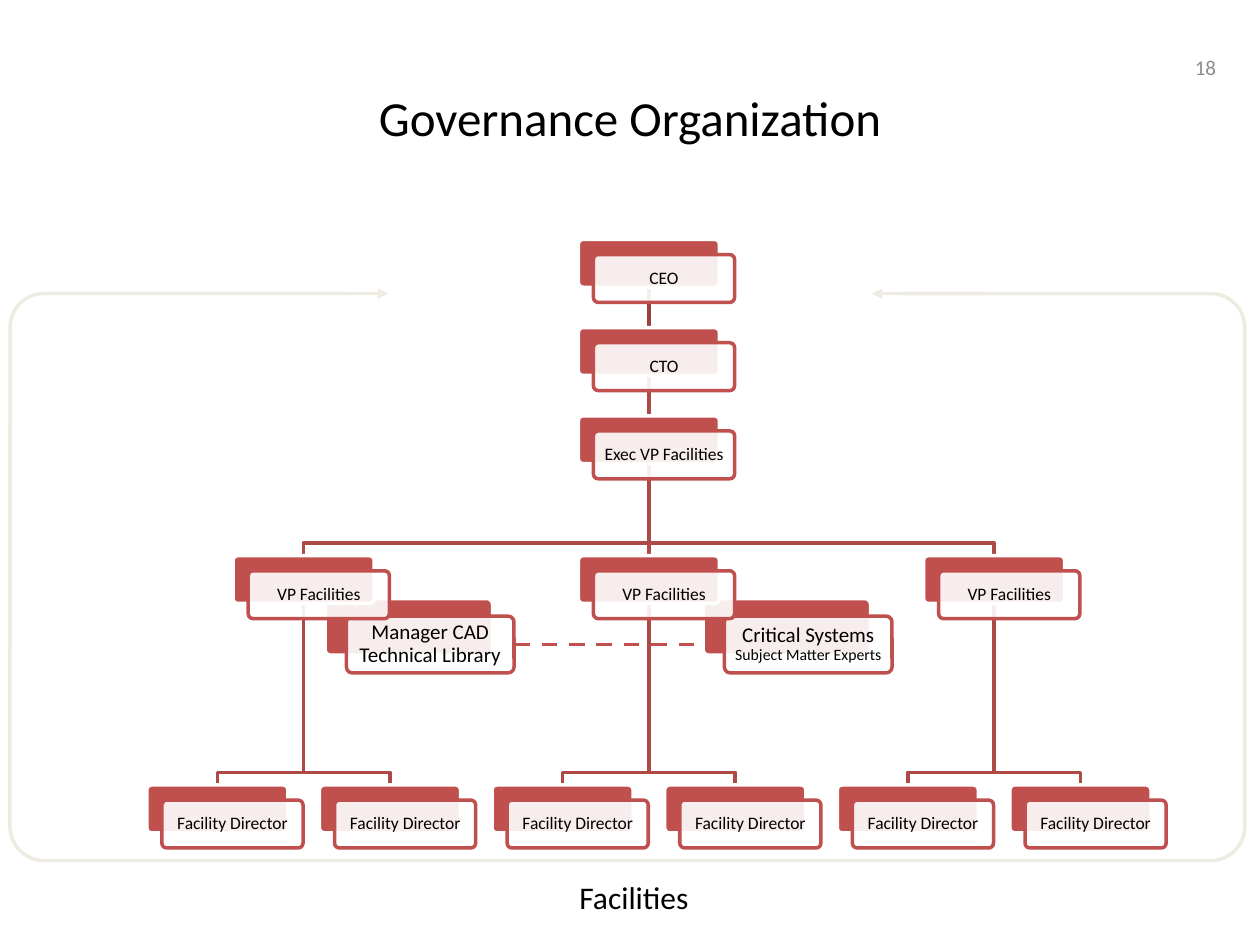
from dataclasses import dataclass

from lxml.etree import SubElement
from pptx import Presentation
from pptx.dml.color import RGBColor
from pptx.enum.dml import MSO_LINE
from pptx.enum.shapes import MSO_CONNECTOR, MSO_SHAPE
from pptx.enum.text import MSO_ANCHOR, PP_ALIGN
from pptx.oxml.ns import qn
from pptx.util import Inches, Pt

TOP, LEFT, BOTTOM, RIGHT = range(4)


@dataclass(frozen=True)
class Theme:
    font: str = "Calibri"
    text: str = "000000"
    muted: str = "8C8C8C"
    white: str = "FFFFFF"
    accent: str = "C0504D"
    link: str = "AE4946"
    top_link: str = "9A403E"
    frame: str = "EEECE1"
    title_size: float = 28
    caption_size: float = 18
    manager_size: float = 12
    expert_size: float = 9
    card_size: float = 10
    number_size: float = 12
    line_width: float = 2
    dash_width: float = 2.25
    card_opacity: int = 90


class SlideBuilder:
    def __init__(self, slide, theme):
        self.slide = slide
        self.theme = theme

    def style_line(self, line, color, width=None):
        line.color.rgb = RGBColor.from_string(color)
        line.width = Pt(width or self.theme.line_width)

    def fill_text(self, frame, runs, color=None, align=PP_ALIGN.CENTER, inset=None, spacing=None):
        frame.word_wrap = True
        frame.vertical_anchor = MSO_ANCHOR.MIDDLE
        if inset is not None:
            frame.margin_left = frame.margin_right = Inches(inset)
            frame.margin_top = frame.margin_bottom = Inches(inset)
        paragraph = frame.paragraphs[0]
        paragraph.alignment = align
        paragraph.line_spacing = spacing
        for text, size in runs:
            run = paragraph.add_run()
            run.text = text
            run.font.name = self.theme.font
            run.font.size = Pt(size)
            run.font.color.rgb = RGBColor.from_string(color or self.theme.text)

    def text(self, left, top, width, height, content, size, **options):
        box = self.slide.shapes.add_textbox(*map(Inches, (left, top, width, height)))
        self.fill_text(box.text_frame, [(content, size)], **options)

    def box(self, left, top, width, height, fill=None, line=None, radius=None):
        kind = MSO_SHAPE.RECTANGLE if radius is None else MSO_SHAPE.ROUNDED_RECTANGLE
        shape = self.slide.shapes.add_shape(kind, *map(Inches, (left, top, width, height)))
        shape.shadow.inherit = False
        if radius is not None:
            shape.adjustments[0] = radius
        if fill:
            shape.fill.solid()
            shape.fill.fore_color.rgb = RGBColor.from_string(fill)
        else:
            shape.fill.background()
        if line:
            self.style_line(shape.line, line)
        else:
            shape.line.fill.background()
        return shape

    def card(self, left, top, width, height, shift, runs, inset):
        theme = self.theme
        plate = self.box(left, top, width, height, theme.accent, theme.white, 0.1)
        front = self.box(left + shift[0], top + shift[1], width, height, theme.white, theme.accent, 0.1)
        color = front._element.spPr.find(qn("a:solidFill"))[0]
        SubElement(color, qn("a:alpha")).set("val", str(theme.card_opacity * 1000))
        self.fill_text(front.text_frame, runs, inset=inset, spacing=0.9)
        return plate, front

    def line(self, start, end, color, width=None, dashed=False, arrow=False):
        connector = self.slide.shapes.add_connector(MSO_CONNECTOR.STRAIGHT, *map(Inches, start + end))
        self.style_line(connector.line, color, width)
        if dashed:
            connector.line.dash_style = MSO_LINE.DASH
        properties = connector._element.spPr
        if arrow:
            SubElement(properties.find(qn("a:ln")), qn("a:tailEnd")).set("type", "triangle")
        SubElement(properties, qn("a:effectLst"))
        return connector

    def elbow(self, start, end, drop=0.1):
        bend = end[1] - drop
        points = [start, (start[0], bend), (end[0], bend), end]
        points = [(Inches(x), Inches(y)) for x, y in points]
        builder = self.slide.shapes.build_freeform(*points[0])
        builder.add_line_segments(points[1:], close=False)
        shape = builder.convert_to_shape()
        shape.shadow.inherit = False
        shape.fill.background()
        self.style_line(shape.line, self.theme.link)

    def organization(self, positions, parents, width, height):
        straight = []
        for child, parent in parents.items():
            _, x, top = positions[child]
            _, parent_x, parent_top = positions[parent]
            start, end = (parent_x, parent_top + height), (x, top)
            if x == parent_x:
                color = self.theme.top_link if parent == "ceo" else self.theme.link
                straight.append((self.line(start, end, color), parent, child))
            else:
                self.elbow(start, end)
        plates = {}
        for key, (label, x, top) in positions.items():
            runs = [(label, self.theme.card_size)]
            plates[key], _ = self.card(x - width / 2, top, width, height, (0.12, 0.12), runs, 0.04)
        for connector, parent, child in straight:
            connector.begin_connect(plates[parent], BOTTOM)
            connector.end_connect(plates[child], TOP)


def main():
    theme = Theme()
    presentation = Presentation()
    presentation.slide_width, presentation.slide_height = Inches(10), Inches(7.5)
    slide = presentation.slides.add_slide(presentation.slide_layouts[6])
    builder = SlideBuilder(slide, theme)

    builder.text(0.5, 0.3, 9, 1.25, "Governance Organization", theme.title_size)
    _, experts = builder.card(
        5.58, 4.75, 1.33, 0.45, (0.17, 0.14),
        [("Critical Systems ", theme.manager_size), ("Subject Matter Experts", theme.expert_size)], 0.05)
    _, manager = builder.card(
        2.58, 4.75, 1.33, 0.45, (0.17, 0.14),
        [("Manager CAD Technical Library", theme.manager_size)], 0.05)
    builder.text(4.5, 6.92, 1.5, 0.4, "Facilities", theme.caption_size, align=PP_ALIGN.LEFT)
    support = builder.line((4.08, 5.11), (5.75, 5.11), theme.accent, theme.dash_width, dashed=True)
    support.begin_connect(manager, RIGHT)
    support.end_connect(experts, LEFT)

    builder.box(0.08, 2.33, 9.8, 4.5, line=theme.frame, radius=0.06)
    builder.box(2.75, 2, 4.42, 0.75, fill=theme.white)

    center, pitch = 5.15, 1.37
    positions = {
        "ceo": ("CEO", center, 1.9),
        "cto": ("CTO", center, 2.6),
        "executive": ("Exec VP Facilities", center, 3.3),
    }
    parents = {"cto": "ceo", "executive": "cto"}
    for branch in range(3):
        vice_president = f"vice president {branch}"
        x = center + (branch - 1) * 2 * pitch
        positions[vice_president] = ("VP Facilities", x, 4.41)
        parents[vice_president] = "executive"
        for side in (-1, 1):
            director = f"director {branch} {side}"
            positions[director] = ("Facility Director", x + side * pitch / 2, 6.23)
            parents[director] = vice_president
    builder.organization(positions, parents, 1.12, 0.38)

    for start, end in ((1.92, 3.08), (7.9, 6.92)):
        builder.line((start, 2.33), (end, 2.33), theme.frame, arrow=True)
    builder.text(9.25, 0.33, 0.5, 0.4, "18", theme.number_size, color=theme.muted, align=PP_ALIGN.RIGHT)
    presentation.save("out.pptx")


if __name__ == "__main__":
    main()
